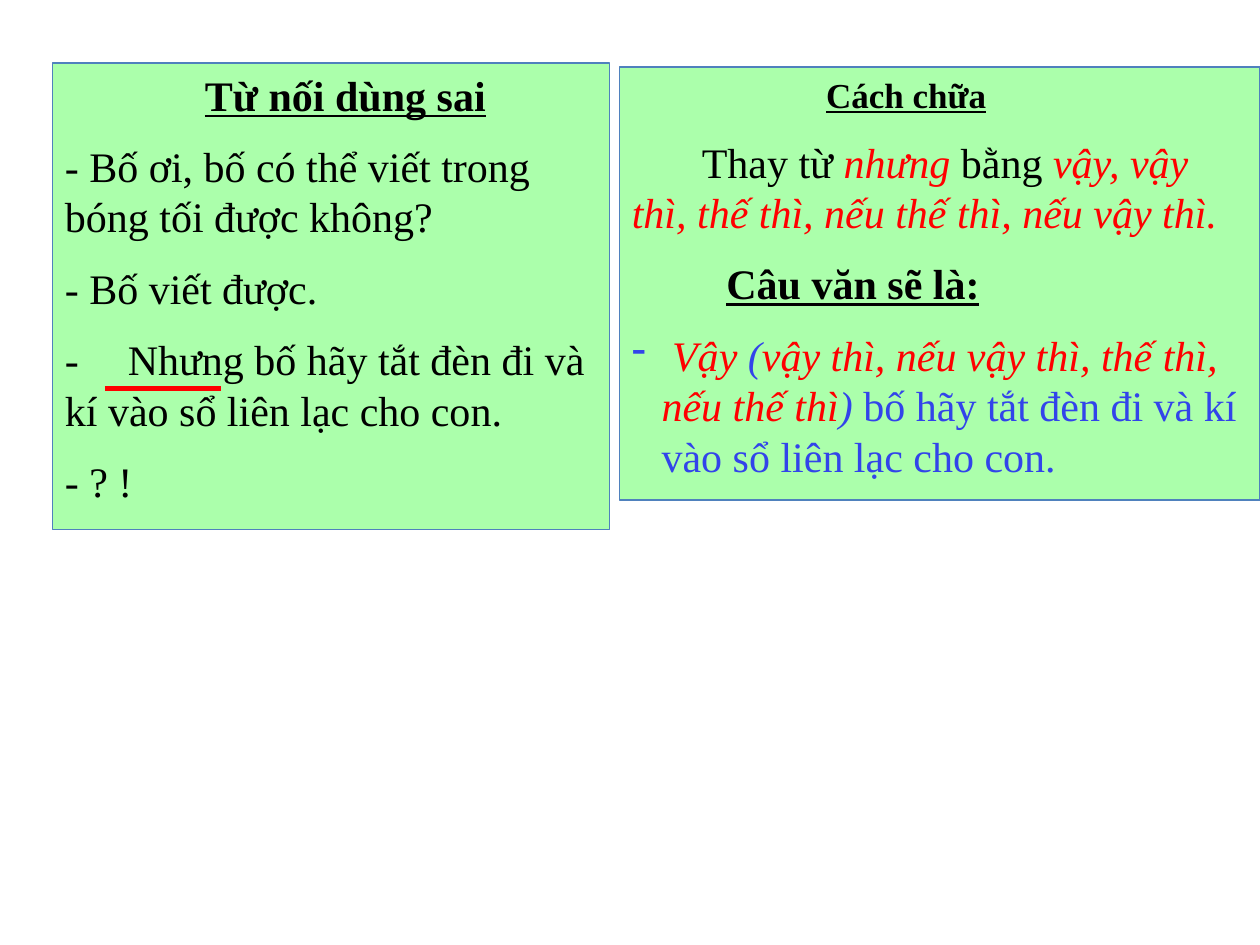
from dataclasses import dataclass

from lxml.etree import SubElement
from pptx import Presentation
from pptx.dml.color import RGBColor
from pptx.enum.shapes import MSO_CONNECTOR
from pptx.enum.text import MSO_ANCHOR
from pptx.oxml.ns import qn
from pptx.util import Pt


@dataclass(frozen=True)
class Theme:
    font: str = "Times New Roman"
    body: int = 24
    small_heading: int = 20
    panel: RGBColor = RGBColor(0xAB, 0xFF, 0xAB)
    border: RGBColor = RGBColor(0x4F, 0x81, 0xBD)
    black: RGBColor = RGBColor(0, 0, 0)
    red: RGBColor = RGBColor(0xFF, 0, 0)
    blue: RGBColor = RGBColor(0x32, 0x44, 0xEA)


theme = Theme()

# Run styles: size, colour, heading (bold and underlined), italic
PLAIN = (theme.body, theme.black, False, False)
HEADING = (theme.body, theme.black, True, False)
SMALL_HEADING = (theme.small_heading, theme.black, True, False)
RED = (theme.body, theme.red, False, True)
BLUE = (theme.body, theme.blue, False, False)
BLUE_ITALIC = (theme.body, theme.blue, False, True)

# Each paragraph: left margin, first-line indent, marker, runs
wrong_connector = [
    (0, 80, None, [("Từ nối dùng sai", HEADING)]),
    (0, 0, None, [("- Bố ơi, bố có thể viết trong bóng tối được không?", PLAIN)]),
    (0, 0, None, [("- Bố viết được.", PLAIN)]),
    (0, 0, "tab", [("-\tNhưng bố hãy tắt đèn đi và kí vào sổ liên lạc cho con.", PLAIN)]),
    (0, 0, None, [("- ? !", PLAIN)]),
]
correction = [
    (0, 111, None, [("Cách chữa", SMALL_HEADING)]),
    (0, 40, None, [
        ("Thay từ ", PLAIN),
        ("nhưng ", RED),
        ("bằng ", PLAIN),
        ("vậy, vậy thì, thế thì, nếu thế thì, nếu vậy thì.", RED),
    ]),
    (0, 54, None, [("Câu văn sẽ là:", HEADING)]),
    (17, -17, "bullet", [
        (" ", BLUE),
        ("Vậy ", RED),
        ("(", BLUE_ITALIC),
        ("vậy thì, nếu vậy thì, thế thì, nếu thế thì", RED),
        (") ", BLUE_ITALIC),
        ("bố hãy tắt đèn đi và kí vào sổ liên lạc cho con.", BLUE),
    ]),
]
panels = [
    (30, 36, 318.25, 266.5, wrong_connector),
    (354, 38.25, 366, 247.5, correction),
]

prs = Presentation()
prs.slide_width, prs.slide_height = Pt(720), Pt(540)
slide = prs.slides.add_slide(prs.slide_layouts[6])

for left, top, width, height, paragraphs in panels:
    panel = slide.shapes.add_textbox(Pt(left), Pt(top), Pt(width), Pt(height))
    panel.fill.solid()
    panel.fill.fore_color.rgb = theme.panel
    panel.line.color.rgb = theme.border
    panel.line.width = Pt(0.75)
    frame = panel.text_frame
    frame.word_wrap = True
    frame.vertical_anchor = MSO_ANCHOR.TOP

    for index, (margin, indent, marker, runs) in enumerate(paragraphs):
        paragraph = frame.add_paragraph() if index else frame.paragraphs[0]
        properties = paragraph._p.get_or_add_pPr()
        properties.set("marL", str(Pt(margin)))
        properties.set("indent", str(Pt(indent)))
        if marker == "bullet":
            SubElement(properties, qn("a:buChar"), char="-")
        elif marker == "tab":
            tabs = SubElement(properties, qn("a:tabLst"))
            SubElement(tabs, qn("a:tab"), pos=str(Pt(20)), algn="l")
        if index:
            paragraph.space_before = Pt(theme.body / 2)
        for text, (size, color, heading, italic) in runs:
            run = paragraph.add_run()
            run.text = text
            run.font.name = theme.font
            run.font.size = Pt(size)
            run.font.color.rgb = color
            run.font.bold = run.font.underline = heading
            run.font.italic = italic

# Line: start x, end x, y, colour, width, arrowhead
for start, end, y, color, weight, arrow in [
    (384, 384, 192, theme.black, 0.75, True),
    (60, 126, 222, theme.red, 3, False),
]:
    stroke = slide.shapes.add_connector(
        MSO_CONNECTOR.STRAIGHT, Pt(start), Pt(y), Pt(end), Pt(y))
    stroke.line.color.rgb = color
    stroke.line.width = Pt(weight)
    if arrow:
        SubElement(stroke.line._get_or_add_ln(), qn("a:tailEnd"), type="triangle")
    SubElement(stroke._element.spPr, qn("a:effectLst"))

prs.save("out.pptx")
